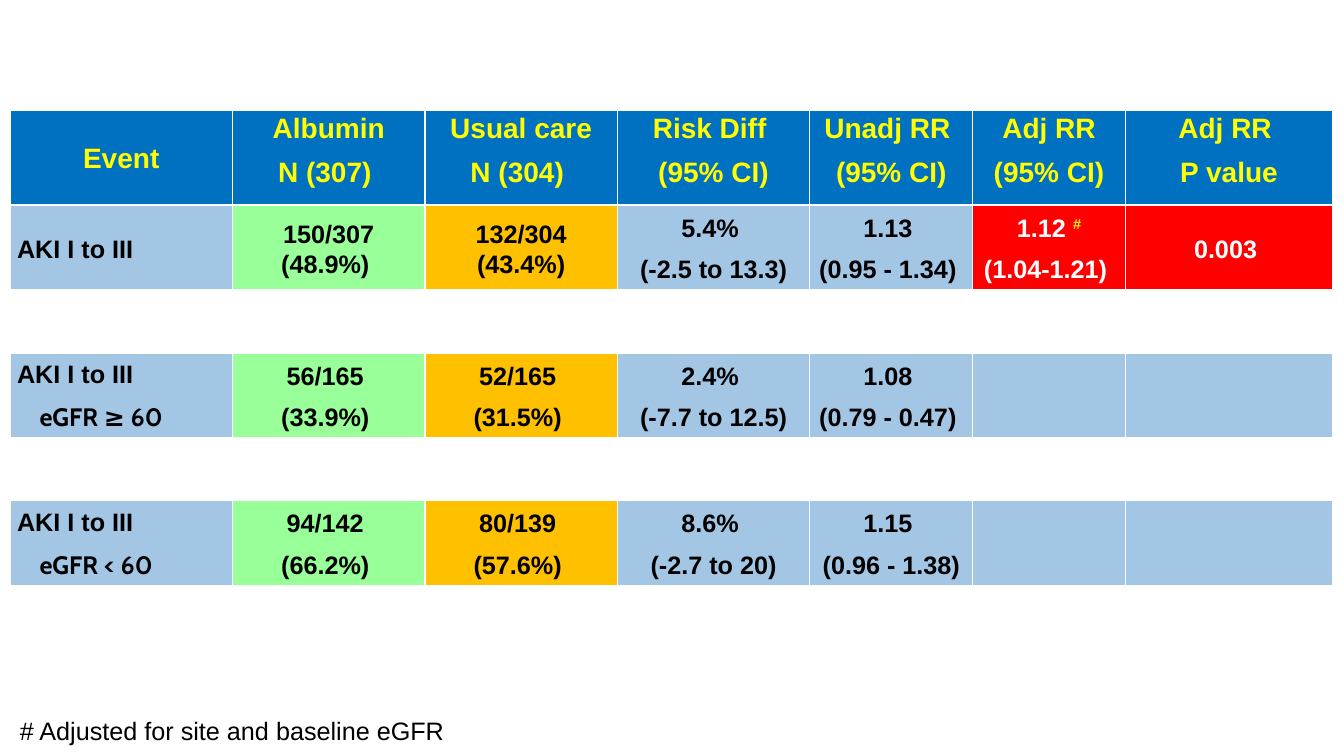
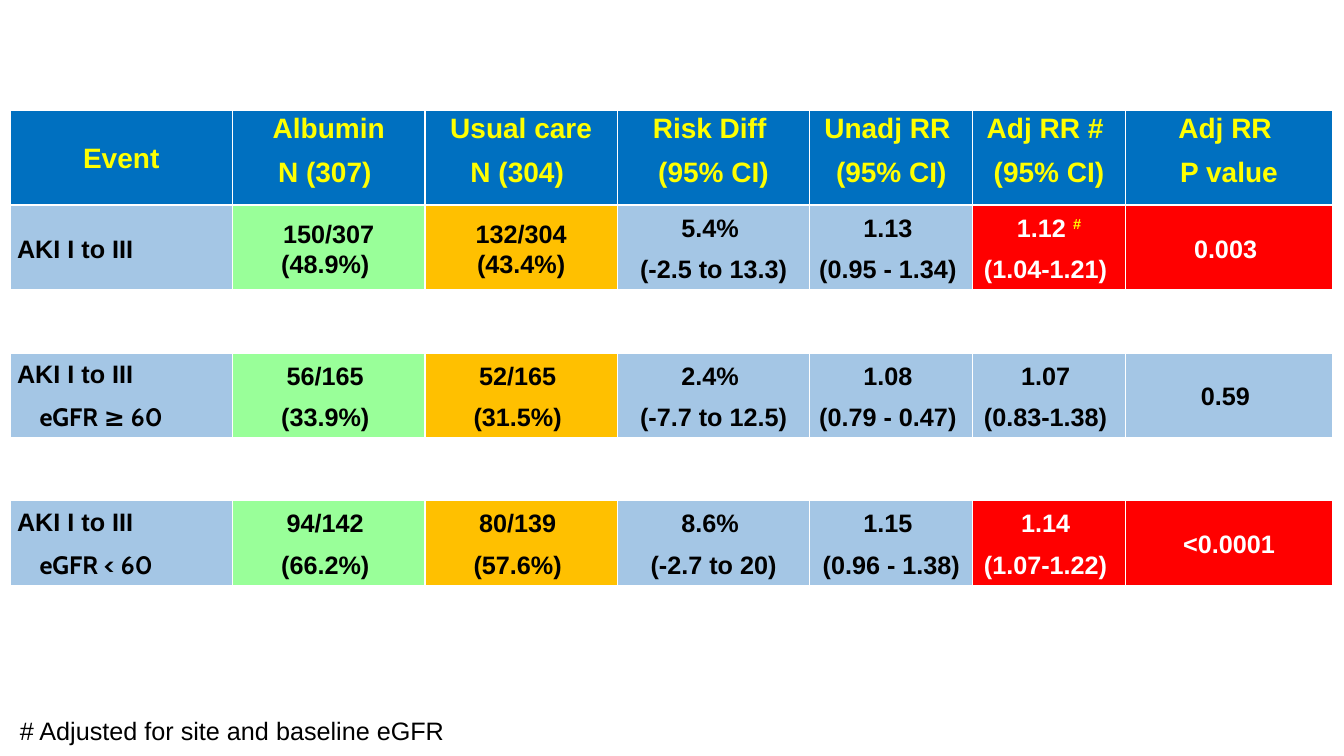
"""Build two slides of kidney-injury results as banded tables with a footnote."""
from lxml import etree
from pptx import Presentation
from pptx.dml.color import RGBColor
from pptx.enum.text import MSO_ANCHOR, MSO_AUTO_SIZE, PP_ALIGN
from pptx.oxml.ns import qn
from pptx.util import Cm, Pt

TOP, MIDDLE = MSO_ANCHOR.TOP, MSO_ANCHOR.MIDDLE
LEFT, CENTER = PP_ALIGN.LEFT, PP_ALIGN.CENTER
FIT_SHAPE = MSO_AUTO_SIZE.SHAPE_TO_FIT_TEXT

COLORS = {
    "header": "0070C0", "heading": "FFFF00", "plain": "A4C6E5",
    "albumin": "99FF99", "usual": "FFC000", "significant": "FF0000",
    "text": "000000", "white": "FFFFFF",
}
BORDERS = {"a:lnL": 1, "a:lnR": 1, "a:lnT": 1, "a:lnB": 3}
COLUMNS = (5.61, 4.85, 4.85, 4.85, 4.11, 3.84, 5.23)
MARGIN = 0.25
HEADER_TOP, HEADER_HEIGHT = 2.79, 2.39
EVENT_TOP, EVENT_HEIGHT, EVENT_PITCH = 5.18, 2.16, 3.72

HEADINGS = [
    ("Event",), ("Albumin", "N (307) "), ("Usual care", "N (304) "),
    ("Risk Diff ", "(95% CI)"), ("Unadj RR ", "(95% CI)"),
]
EVENTS = [
    [("AKI I to III",), ("150/307 (48.9%) ",), ("132/304 (43.4%)",),
     ("5.4% ", "(-2.5 to 13.3)"), ("1.13 ", "(0.95 - 1.34) ")],
    [("AKI I to III", "eGFR ≥ 60"), ("56/165 ", "(33.9%) "), ("52/165 ", "(31.5%) "),
     ("2.4% ", "(-7.7 to 12.5)"), ("1.08 ", "(0.79 - 0.47) ")],
    [("AKI I to III", "eGFR < 60"), ("94/142 ", "(66.2%) "), ("80/139 ", "(57.6%) "),
     ("8.6% ", "(-2.7 to 20)"), ("1.15 ", "(0.96 - 1.38)")],
]
OVERALL = (("1.12 #", "(1.04-1.21) "), ("0.003 ",), True)
PENDING = ((), (), False)
RESULTS = [
    ("Adj RR", [OVERALL, PENDING, PENDING]),
    ("Adj RR # ", [
        OVERALL,
        (("1.07 ", "(0.83-1.38) "), ("0.59 ",), False),
        (("1.14 ", "(1.07-1.22) "), ("<0.0001",), True),
    ]),
]


class Deck:
    """Hold the shared style and the slide being built."""

    def __init__(self):
        self.prs = Presentation()
        self.prs.slide_width, self.prs.slide_height = Cm(33.87), Cm(19.05)
        self.slide = None

    def new_slide(self):
        """Start a blank slide."""
        self.slide = self.prs.slides.add_slide(self.prs.slide_layouts[6])

    def run(self, paragraph, text, size, color, bold=True, font="Arial"):
        """Add one formatted run."""
        run = paragraph.add_run()
        run.text = text
        run.font.name, run.font.size, run.font.bold = font, Pt(size), bold
        run.font.color.rgb = RGBColor.from_string(COLORS[color])
        return run

    def cell(self, cell, lines, fill, color, size, align, anchor):
        """Give a cell its borders, fill and lines of text."""
        properties = cell._tc.get_or_add_tcPr()
        for tag, width in BORDERS.items():
            line = etree.SubElement(properties, qn(tag), w=str(Pt(width)))
            solid = etree.SubElement(line, qn("a:solidFill"))
            etree.SubElement(solid, qn("a:srgbClr"), val=COLORS["white"])
        cell.fill.solid()
        cell.fill.fore_color.rgb = RGBColor.from_string(COLORS[fill])
        cell.margin_left = cell.margin_right = Cm(0.18)
        cell.margin_top = cell.margin_bottom = 0
        cell.vertical_anchor = anchor
        for index, text in enumerate(lines):
            frame = cell.text_frame
            paragraph = frame.add_paragraph() if index else frame.paragraphs[0]
            paragraph.alignment = align
            paragraph.line_spacing, paragraph.space_after = 1.07, Pt(8)
            subgroup = text.startswith("eGFR")
            if subgroup:
                paragraph._p.get_or_add_pPr().set("marL", str(Cm(0.57)))
            marked = fill == "significant" and text.endswith("#")
            self.run(paragraph, text.removesuffix("#") if marked else text, size, color,
                     font="Cabin" if subgroup else "Arial")
            if marked:
                mark = self.run(paragraph, "#", size, "heading")
                mark._r.get_or_add_rPr().set("baseline", "30000")

    def band(self, top, height):
        """Add a one-row table and return its cells."""
        table = self.slide.shapes.add_table(
            1, len(COLUMNS), Cm(MARGIN), Cm(top), Cm(sum(COLUMNS)), Cm(height)).table
        table.first_row = table.horz_banding = False
        table.rows[0].height = Cm(height)
        for column, width in zip(table.columns, COLUMNS):
            column.width = Cm(width)
        return table.rows[0].cells

    def header(self, adjusted):
        """Add the heading band."""
        headings = HEADINGS + [(adjusted, "(95% CI)"), ("Adj RR ", "P value")]
        for index, (cell, lines) in enumerate(zip(self.band(HEADER_TOP, HEADER_HEIGHT), headings)):
            self.cell(cell, lines, "header", "heading", 20, CENTER, TOP if index else MIDDLE)

    def event(self, position, event, result):
        """Add the band of one event."""
        ratio, p_value, significant = result
        outcome = "significant" if significant else "plain"
        fills = ("plain", "albumin", "usual", "plain", "plain", outcome, outcome)
        cells = self.band(EVENT_TOP + position * EVENT_PITCH, EVENT_HEIGHT)
        for index, (cell, lines, fill) in enumerate(zip(cells, event + [ratio, p_value], fills)):
            color = "white" if fill == "significant" else "text"
            self.cell(cell, lines, fill, color, 18, CENTER if index else LEFT, MIDDLE)

    def footnote(self, text):
        """Add the note at the foot of the slide."""
        frame = self.slide.shapes.add_textbox(
            Cm(MARGIN), Cm(17.9), Cm(11.3), Cm(1.02)).text_frame
        frame.word_wrap, frame.auto_size = False, FIT_SHAPE
        self.run(frame.paragraphs[0], text, 18, "text", bold=False)


def main():
    """Build and save the presentation."""
    deck = Deck()
    for adjusted, results in RESULTS:
        deck.new_slide()
        deck.header(adjusted)
        for position, (event, result) in enumerate(zip(EVENTS, results)):
            deck.event(position, event, result)
        deck.footnote("# Adjusted for site and baseline eGFR")
    deck.prs.save("out.pptx")


if __name__ == "__main__":
    main()
